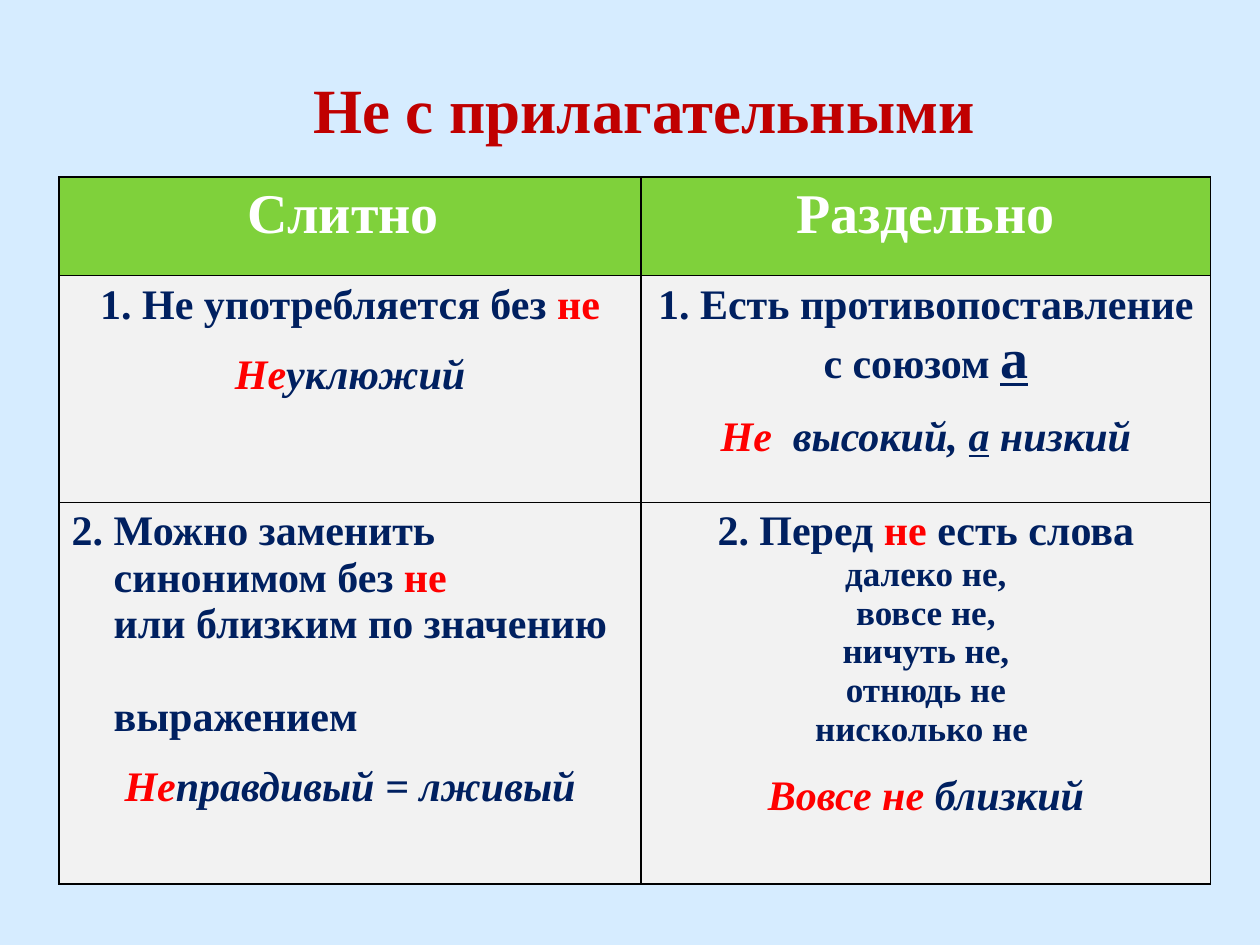
from lxml import etree
from pptx import Presentation
from pptx.dml.color import RGBColor
from pptx.enum.text import MSO_ANCHOR, PP_ALIGN
from pptx.oxml.ns import qn
from pptx.util import Pt

CENTER, LEFT = PP_ALIGN.CENTER, PP_ALIGN.LEFT
MIDDLE = MSO_ANCHOR.MIDDLE
FONT = "Times New Roman"
COLORS = {
    "background": "D6ECFF", "title": "C00000", "header": "7FD13B",
    "body": "F2F2F2", "white": "FFFFFF", "navy": "002060",
    "red": "FF0000", "border": "000000",
}
COLUMNS = [332.64, 325.44]
ROWS = [56.16, 129.6, 218.16]
GAP = 13.5      # space above each example
INDENT = 24     # hanging indent of the second rule


def rgb(name):
    return RGBColor.from_string(COLORS[name])


def run(text, color="navy", size=24, italic=False, underline=False):
    return text, color, size, italic, underline


def example(text, color="navy", underline=False):
    return run(text, color, italic=True, underline=underline)


def para(*runs, align=CENTER, before=0, left=0, first=0):
    return runs, align, before, left, first


def write(tf, paras):
    """Fill a text frame paragraph by paragraph, run by run."""
    for i, (runs, align, before, left, first) in enumerate(paras):
        p = tf.add_paragraph() if i else tf.paragraphs[0]
        p.alignment = align
        p.space_before = Pt(before)
        if left:
            pPr = p._p.get_or_add_pPr()
            pPr.set("marL", str(Pt(left)))
            pPr.set("indent", str(Pt(first)))
        for text, color, size, italic, underline in runs:
            r = p.add_run()
            r.text = text
            font = r.font
            font.name, font.size, font.bold = FONT, Pt(size), True
            font.italic, font.underline = italic, underline
            font.color.rgb = rgb(color)


def add_title(s, text):
    sp = s.shapes.add_textbox(Pt(62), Pt(50.4), Pt(612), Pt(62))
    tf = sp.text_frame
    tf.word_wrap = True
    tf.vertical_anchor = MIDDLE
    tf.margin_bottom = Pt(43)   # lifts the line clear of the table
    write(tf, [para(run(text, "title", 36))])


def add_borders(cell):
    tcPr = cell._tc.get_or_add_tcPr()
    for side in ("lnL", "lnR", "lnT", "lnB"):
        ln = etree.SubElement(tcPr, qn(f"a:{side}"), w=str(Pt(1)))
        fill = etree.SubElement(ln, qn("a:solidFill"))
        etree.SubElement(fill, qn("a:srgbClr"), val=COLORS["border"])


def add_rules_table(s, rows):
    table = s.shapes.add_table(len(ROWS), len(COLUMNS), Pt(33.75), Pt(101.25),
                               Pt(sum(COLUMNS)), Pt(sum(ROWS))).table
    for column, width in zip(table.columns, COLUMNS):
        column.width = Pt(width)
    for i, (height, contents) in enumerate(zip(ROWS, rows)):
        table.rows[i].height = Pt(height)
        for j, paras in enumerate(contents):
            cell = table.cell(i, j)
            add_borders(cell)
            cell.fill.solid()
            cell.fill.fore_color.rgb = rgb("body" if i else "header")
            write(cell.text_frame, paras)


def table_content():
    headers = [[para(run(text, "white", 32))] for text in ("Слитно ", "Раздельно")]

    # First rule of each column
    no_form_without = [
        para(run("1. Не употребляется без "), run("не", "red")),
        para(example("Не", "red"), example("уклюжий"), before=GAP),
    ]
    opposition = [
        para(run("1. Есть противопоставление с союзом "),
             run("а", size=32, underline=True)),
        para(example("Не", "red"), example("  высокий, "),
             example("а", underline=True), example(" низкий"), before=GAP),
    ]

    # Second rule of each column
    hanging = {"align": LEFT, "left": INDENT}
    synonym = [
        para(run("2. Можно заменить"), first=-INDENT, **hanging),
        para(run("синонимом без "), run("не", "red"), **hanging),
        para(run("или близким по значению"), **hanging),
        para(run("выражением"), before=26.5, **hanging),
        para(example("Не", "red"), example("правдивый = лживый"), before=GAP),
    ]
    words = ["далеко не,", "вовсе не,", "ничуть не,", "отнюдь не", "нисколько не "]
    intensifiers = [
        para(run("2. Перед "), run("не ", "red"), run("есть слова")),
        *[para(run(word, size=20)) for word in words],
        para(example("Вовсе не ", "red"), example("близкий"), before=GAP),
    ]
    return [headers, [no_form_without, opposition], [synonym, intensifiers]]


def main():
    prs = Presentation()
    prs.slide_width, prs.slide_height = Pt(720), Pt(540)
    s = prs.slides.add_slide(prs.slide_layouts[6])
    s.background.fill.solid()
    s.background.fill.fore_color.rgb = rgb("background")

    add_title(s, "Не с прилагательными")
    add_rules_table(s, table_content())
    prs.save("out.pptx")


if __name__ == "__main__":
    main()
